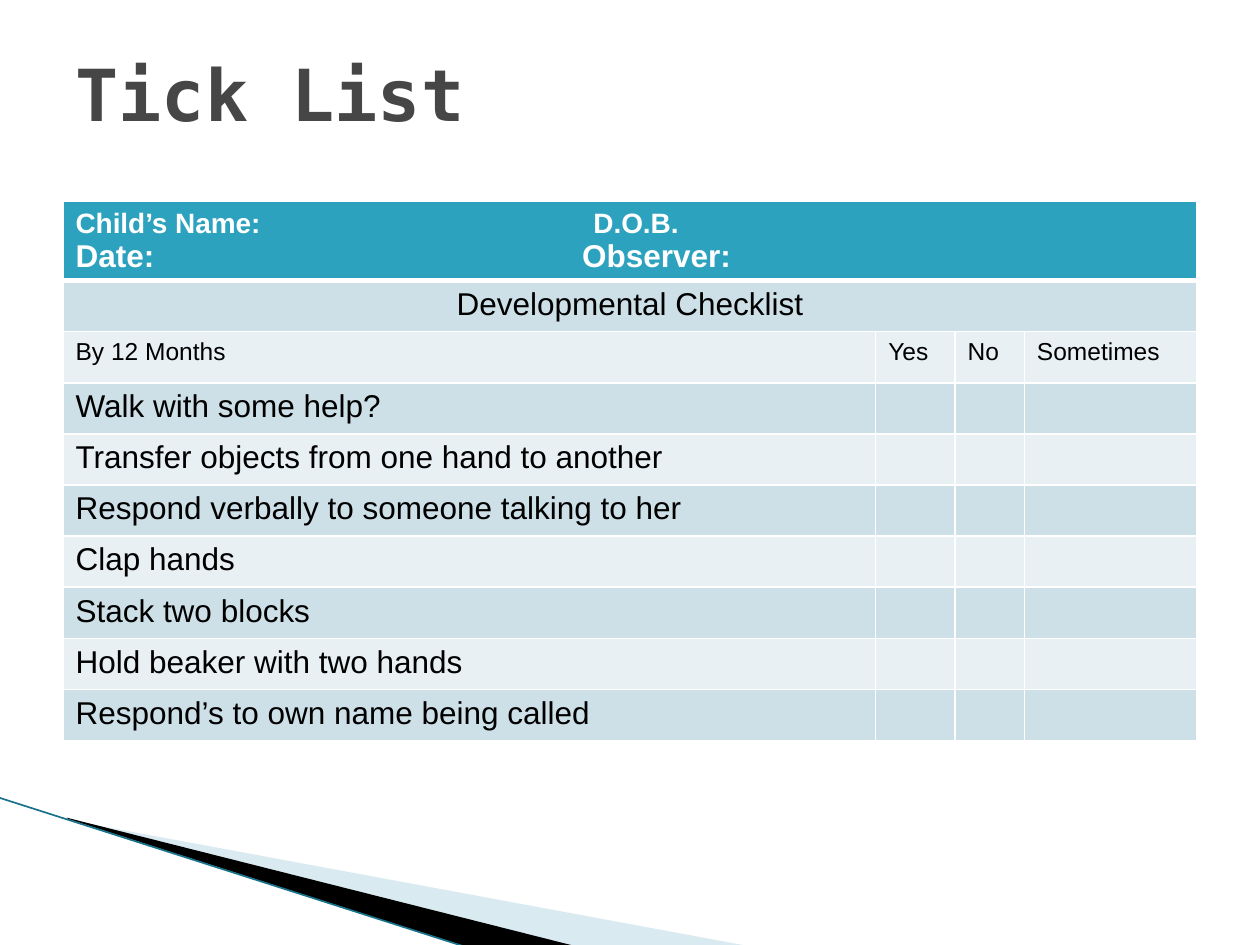
from lxml import etree
from pptx import Presentation
from pptx.dml.color import RGBColor
from pptx.enum.text import MSO_ANCHOR, PP_ALIGN
from pptx.oxml.ns import qn
from pptx.util import Inches, Pt

LEFT, CENTER = PP_ALIGN.LEFT, PP_ALIGN.CENTER
MIDDLE = MSO_ANCHOR.MIDDLE
WHITE, BLACK, HEADER, DARK_BAND, LIGHT_BAND = "FFFFFF", "000000", "2DA2BF", "CDE0E8", "E8F0F4"
rgb = RGBColor.from_string


def write(p, text, size=18, color=BLACK, bold=False, font="Arial", align=LEFT, tab=None):
    """Format a paragraph and fill it; tab is a left tab stop in inches."""
    p.alignment = align
    if tab:
        tabs = etree.SubElement(p._p.get_or_add_pPr(), qn("a:tabLst"))
        etree.SubElement(tabs, qn("a:tab"), pos=str(Inches(tab)), algn="l")
    r = p.add_run()
    r.text = text
    r.font.size, r.font.bold, r.font.name = Pt(size), bold, font
    r.font.color.rgb = rgb(color)


def style_cell(cell, fill, bottom=1):
    """Draw white borders (bottom in points) and fill the cell."""
    tcPr = cell._tc.get_or_add_tcPr()
    for side, width in (("L", 1), ("R", 1), ("T", 1), ("B", bottom)):
        ln = etree.SubElement(tcPr, qn(f"a:ln{side}"), w=str(Pt(width)))
        solid = etree.SubElement(ln, qn("a:solidFill"))
        etree.SubElement(solid, qn("a:srgbClr"), val=WHITE)
    cell.fill.solid()
    cell.fill.fore_color.rgb = rgb(fill)


prs = Presentation()
prs.slide_width, prs.slide_height = Inches(10), Inches(7.5)
s = prs.slides.add_slide(prs.slide_layouts[5])

# Corner wedges
wedges = [
    ("A0CBDC", 40, [(0.55, 6.51), (5.95, 7.51), (4.56, 7.51), (0.55, 6.5)]),
    (BLACK, 100, [(0.53, 6.49), (4.57, 7.51), (3.72, 7.52), (0.54, 6.5)]),
]
for color, opacity, points in wedges:
    corners = [(Inches(x), Inches(y)) for x, y in points]
    builder = s.shapes.build_freeform(*corners[0])
    builder.add_line_segments(corners[1:], close=True)
    sp = builder.convert_to_shape()
    sp.shadow.inherit = False
    sp.line.fill.background()
    sp.fill.solid()
    sp.fill.fore_color.rgb = rgb(color)
    if opacity < 100:
        clr = sp._element.spPr.find(qn("a:solidFill"))[0]
        etree.SubElement(clr, qn("a:alpha"), val=str(opacity * 1000))

edge = s.shapes.add_connector(1, Inches(-0.01), Inches(6.33), Inches(3.71), Inches(7.52))
edge.line.color.rgb = rgb("17728A")
edge.line.width = Pt(0.95)
etree.SubElement(edge._element.spPr, qn("a:effectLst"))

# Title
title = s.shapes.title
title.left, title.top, title.width, title.height = Inches(0.5), Inches(0.3), Inches(9), Inches(0.87)
title.text_frame.vertical_anchor = MIDDLE
write(title.text_frame.paragraphs[0], "Tick List", size=41, color="464646", bold=True,
      font="DejaVu Sans Mono")

# Checklist table
skills = [
    "Walk with some help?",
    "Transfer objects from one hand to another",
    "Respond verbally to someone talking to her",
    "Clap hands",
    "Stack two blocks",
    "Hold beaker with two hands",
    "Respond’s to own name being called",
]
col_widths = [6.45, 0.63, 0.55, 1.37]
header_height, body_height = 0.62, 3.65
table = s.shapes.add_table(len(skills) + 3, len(col_widths), Inches(0.5), Inches(1.6),
                           Inches(9), Inches(header_height + body_height)).table
for col, width in zip(table.columns, col_widths):
    col.width = Inches(width)
for i, row in enumerate(table.rows):
    row.height = Inches(body_height / (len(skills) + 2)) if i else Inches(header_height)
    fill = (DARK_BAND if i % 2 else LIGHT_BAND) if i else HEADER
    for cell in row.cells:
        style_cell(cell, fill, bottom=1 if i else 3)
for i in range(2):
    table.cell(i, 0).merge(table.cell(i, len(col_widths) - 1))

tf = table.cell(0, 0).text_frame
write(tf.paragraphs[0], "Child’s Name:\tD.O.B.", size=16, color=WHITE, bold=True, tab=4.11)
write(tf.add_paragraph(), "Date:\tObserver:", color=WHITE, bold=True, tab=4.02)
write(table.cell(1, 0).text_frame.paragraphs[0], "Developmental Checklist", align=CENTER)
for j, heading in enumerate(["By 12 Months", "Yes", "No", "Sometimes"]):
    write(table.cell(2, j).text_frame.paragraphs[0], heading, size=14)
for i, skill in enumerate(skills, start=3):
    write(table.cell(i, 0).text_frame.paragraphs[0], skill)

prs.save("out.pptx")
